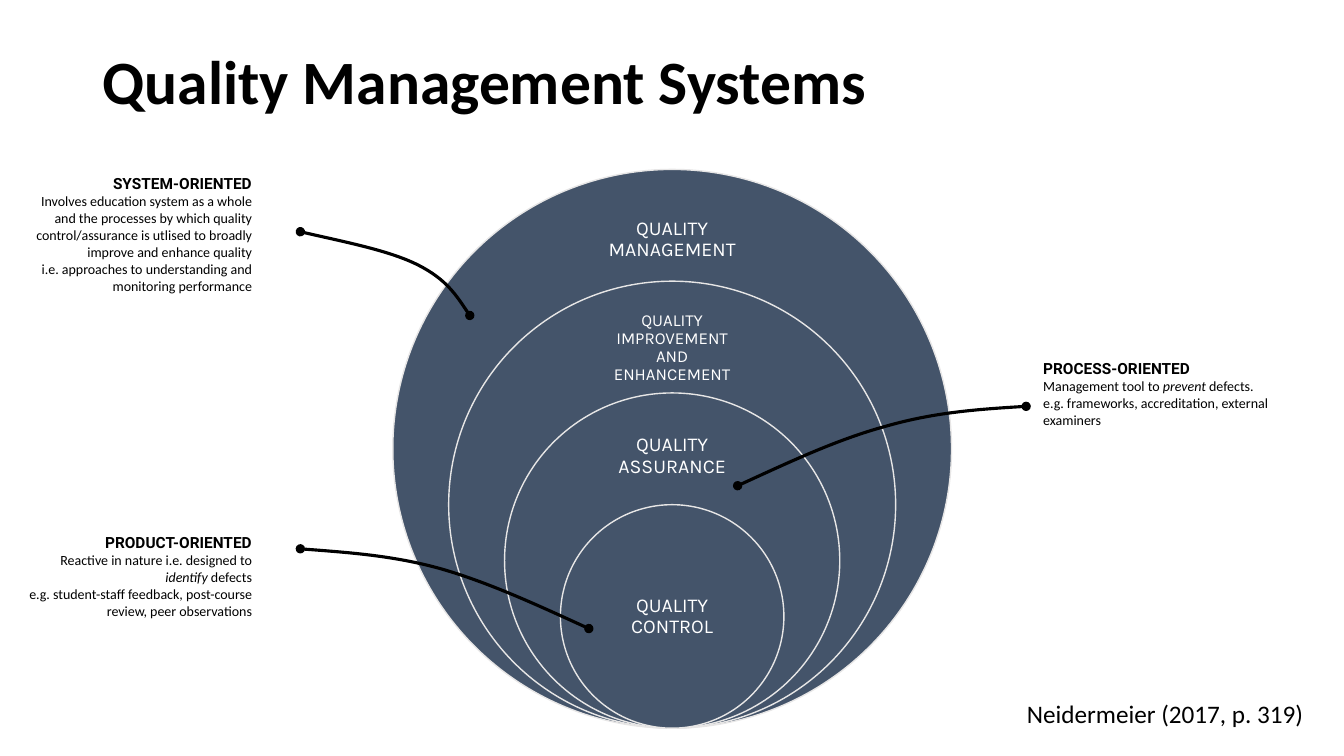
from lxml import etree
from pptx import Presentation
from pptx.dml.color import RGBColor
from pptx.enum.shapes import MSO_SHAPE
from pptx.enum.text import MSO_ANCHOR, MSO_AUTO_SIZE, PP_ALIGN
from pptx.oxml.ns import qn
from pptx.util import Cm, Pt

OVAL = MSO_SHAPE.OVAL
TOP, MIDDLE = MSO_ANCHOR.TOP, MSO_ANCHOR.MIDDLE
LEFT, CENTER, RIGHT = PP_ALIGN.LEFT, PP_ALIGN.CENTER, PP_ALIGN.RIGHT
FIT_SHAPE = MSO_AUTO_SIZE.SHAPE_TO_FIT_TEXT
BLACK = RGBColor(0x00, 0x00, 0x00)
WHITE = RGBColor(0xFF, 0xFF, 0xFF)
SLATE = RGBColor(0x44, 0x54, 0x6A)
PALE = RGBColor(0xE7, 0xE6, 0xE6)

CENTER_X, BASE_Y, OUTER = 16.94, 18.35, 14.08
LABEL_WIDTH = 3.94
LEVELS = [
    ("QUALITY MANAGEMENT", 4.98, 2.11, 14, 0.28),
    ("QUALITY IMPROVEMENT AND ENHANCEMENT", 7.75, 2.03, 12, 0.23),
    ("QUALITY ASSURANCE", 10.54, 1.91, 14, 0.28),
    ("QUALITY CONTROL", 14.12, 2.82, 14, 0.28),
]
NOTES = [
    ((0.4, 13.31, 6.2, 2.44), RIGHT, "PRODUCT-ORIENTED", [
        [("Reactive in nature i.e. designed to ", False), ("identify", True), (" defects", False)],
        [("e.g. student-staff feedback, post-course review, peer observations", False)],
    ]),
    ((26.04, 8.92, 6.71, 2.01), LEFT, "PROCESS-ORIENTED", [
        [("Management tool to ", False), ("prevent", True), (" defects.", False)],
        [("e.g. frameworks, accreditation, external examiners", False)],
    ]),
    ((0.4, 4.27, 6.2, 3.3), RIGHT, "SYSTEM-ORIENTED", [
        [("Involves education system as a whole and the processes by which quality "
          "control/assurance is utlised to broadly improve and enhance quality", False)],
        [("i.e. approaches to understanding and monitoring performance", False)],
    ]),
]
CURVES = [
    [(14.84, 15.84), (13.59, 15.27), (12.32, 14.68), (11.1, 14.33),
     (9.91, 14), (8.74, 13.92), (7.57, 13.83)],
    [(18.59, 12.24), (19.86, 11.66), (21.11, 11.07), (22.33, 10.74),
     (23.55, 10.39), (24.71, 10.31), (25.86, 10.24)],
    [(7.57, 5.84), (8.69, 6.1), (9.83, 6.32), (10.54, 6.68),
     (11.25, 7.04), (11.53, 7.49), (11.84, 7.95)],
]


class Page:
    """Draws the elements of one slide in a shared style."""

    def __init__(self, deck):
        self.shapes = deck.slides.add_slide(deck.slide_layouts[6]).shapes

    def text(self, place, anchor=TOP, inset=None, wrap=True, fit=False):
        frame = self.shapes.add_textbox(*map(Cm, place)).text_frame
        frame.word_wrap = wrap
        frame.vertical_anchor = anchor
        if fit:
            frame.auto_size = FIT_SHAPE
        if inset is not None:
            frame.margin_left = frame.margin_right = Cm(inset)
            frame.margin_top = frame.margin_bottom = Cm(inset)
        return frame

    def span(self, para, text, size, font="Calibri", color=BLACK, bold=False, italic=False):
        run = para.add_run()
        run.text = text
        run.font.size, run.font.name = Pt(size), font
        run.font.bold, run.font.italic = bold, italic
        run.font.color.rgb = color

    def title(self, place, text):
        para = self.text(place, MIDDLE).paragraphs[0]
        para.line_spacing = 0.9
        self.span(para, text, 44, bold=True)

    def circle(self, diameter):
        place = (CENTER_X - diameter / 2, BASE_Y - diameter, diameter, diameter)
        disc = self.shapes.add_shape(OVAL, *map(Cm, place))
        disc.shadow.inherit = False
        disc.fill.solid()
        disc.fill.fore_color.rgb = SLATE
        disc.line.color.rgb = PALE
        disc.line.width = Pt(1)

    def label(self, text, top, height, size, inset):
        place = (CENTER_X - LABEL_WIDTH / 2, top, LABEL_WIDTH, height)
        para = self.text(place, MIDDLE, inset).paragraphs[0]
        para.alignment = CENTER
        para.line_spacing = 0.9
        self.span(para, text, size, "Karla", WHITE)

    def note(self, place, align, heading, lines):
        frame = self.text(place, fit=True)
        para = frame.paragraphs[0]
        para.alignment = align
        self.span(para, heading, 11, "Roboto", bold=True)
        for line in lines:
            para = frame.add_paragraph()
            para.alignment = align
            for text, italic in line:
                self.span(para, text, 10, italic=italic)

    def curve(self, points):
        start, *rest = [(Cm(x), Cm(y)) for x, y in points]
        builder = self.shapes.build_freeform(*start)
        builder.add_line_segments(rest, close=False)
        curve = builder.convert_to_shape()
        curve.shadow.inherit = False
        curve.fill.background()
        curve.line.color.rgb = BLACK
        curve.line.width = Pt(2.25)
        outline = next(curve.element.iter(qn("a:path")))
        segments = outline.findall(qn("a:lnTo"))
        for first in range(0, len(segments), 3):
            bezier = etree.SubElement(outline, qn("a:cubicBezTo"))
            for segment in segments[first:first + 3]:
                bezier.append(segment[0])
                outline.remove(segment)
        stroke = curve.element.spPr.find(qn("a:ln"))
        for end in ("a:headEnd", "a:tailEnd"):
            etree.SubElement(stroke, qn(end), type="oval")

    def citation(self, place, text):
        frame = self.text(place, wrap=False, fit=True)
        self.span(frame.paragraphs[0], text, 18)


def main():
    deck = Presentation()
    deck.slide_width, deck.slide_height = Cm(33.87), Cm(19.05)
    page = Page(deck)
    page.title((2.34, 0.28, 25.02, 3.68), "Quality Management Systems")
    for index, level in enumerate(LEVELS):
        page.circle(OUTER * (1 - index / 5))
        page.label(*level)
    for points, note in zip(CURVES, NOTES):
        page.curve(points)
        page.note(*note)
    page.citation((25.63, 17.48, 7.57, 1.02), "Neidermeier (2017, p. 319)")
    deck.save("out.pptx")


if __name__ == "__main__":
    main()
